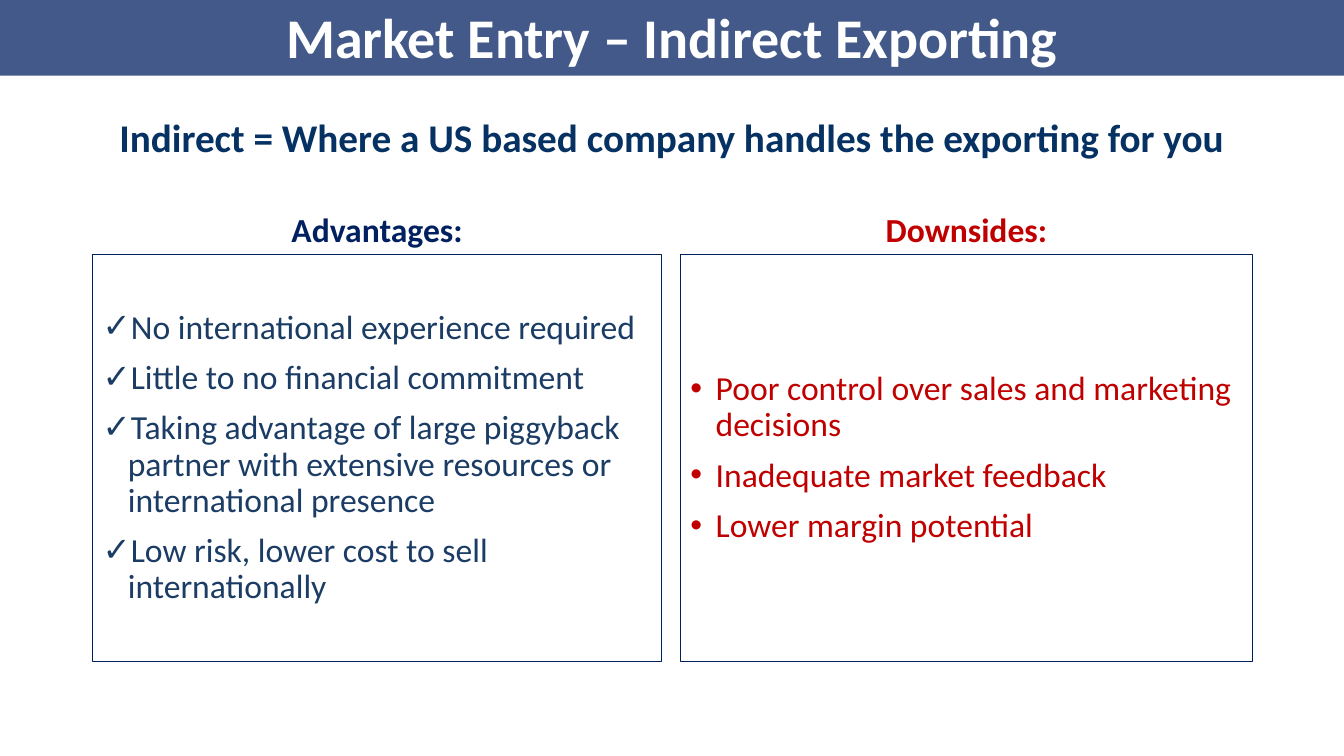
from lxml.etree import SubElement
from pptx import Presentation
from pptx.dml.color import RGBColor
from pptx.enum.shapes import MSO_SHAPE as Shape
from pptx.enum.text import MSO_ANCHOR as Anchor, PP_ALIGN as Align
from pptx.oxml.ns import qn
from pptx.util import Inches, Pt

WHITE = RGBColor(0xFF, 0xFF, 0xFF)
NAVY = RGBColor(0x00, 0x20, 0x60)
STEEL = RGBColor(0x1B, 0x3C, 0x65)
DEEP_BLUE = RGBColor(0x06, 0x31, 0x63)
RED = RGBColor(0xC0, 0x00, 0x00)

SLIDE_W, SLIDE_H = 13.33, 7.5
HEADING_H = 0.9
INDENT = Inches(0.25)

ADVANTAGES = [
    "No international experience required",
    "Little to no financial commitment",
    "Taking advantage of large piggyback partner with extensive resources or "
    "international presence",
    "Low risk, lower cost to sell internationally",
]
DOWNSIDES = [
    "Poor control over sales and marketing decisions",
    "Inadequate market feedback",
    "Lower margin potential",
]


def write(paragraph, text, size, color, bold=False):
    run = paragraph.add_run()
    run.text = text
    run.font.name = "Calibri"
    run.font.size = Pt(size)
    run.font.bold = bold
    run.font.color.rgb = color


def add_bullet(paragraph, mark):
    """Give the paragraph a bullet mark and a hanging indent."""
    props = paragraph._p.get_or_add_pPr()
    props.set("marL", str(INDENT))
    props.set("indent", str(-INDENT))
    SubElement(props, qn("a:buFont"), typeface="Arial")
    SubElement(props, qn("a:buChar"), char=mark)


def add_rectangle(slide, box):
    rectangle = slide.shapes.add_shape(Shape.RECTANGLE, *map(Inches, box))
    rectangle.shadow.inherit = False
    rectangle.text_frame.word_wrap = True
    rectangle.text_frame.vertical_anchor = Anchor.MIDDLE
    return rectangle


def add_line_of_text(slide, box, text, size, color, anchor, spacing=1.0):
    """Add a text box with one bold, centred line."""
    frame = slide.shapes.add_textbox(*map(Inches, box)).text_frame
    frame.word_wrap = True
    frame.vertical_anchor = anchor
    paragraph = frame.paragraphs[0]
    paragraph.alignment = Align.CENTER
    paragraph.line_spacing = spacing
    write(paragraph, text, size, color, bold=True)


def add_title_band(slide, box, title):
    band = add_rectangle(slide, box)
    band.fill.solid()
    band.fill.fore_color.rgb = NAVY
    color = band.fill._xPr.find(qn("a:solidFill"))[0]
    SubElement(color, qn("a:alpha"), val="74000")
    band.line.fill.background()
    frame = band.text_frame
    frame.margin_left = frame.margin_right = Inches(0.12)
    frame.margin_top = frame.margin_bottom = Inches(0.06)
    frame.paragraphs[0].alignment = Align.CENTER
    write(frame.paragraphs[0], title, 40, WHITE, bold=True)


def add_column(slide, box, heading, heading_color, points, mark, color):
    """Place a heading above an outlined panel of bulleted points."""
    left, top, width, height = box
    add_line_of_text(slide, (left, top, width, HEADING_H), heading, 24,
                     heading_color, Anchor.BOTTOM, 0.9)
    panel = add_rectangle(
        slide, (left, top + HEADING_H, width, height - HEADING_H))
    panel.fill.background()
    panel.line.color.rgb = NAVY
    panel.line.width = Pt(0.75)
    frame = panel.text_frame
    for index, point in enumerate(points):
        paragraph = frame.add_paragraph() if index else frame.paragraphs[0]
        paragraph.alignment = Align.LEFT
        paragraph.line_spacing = 0.9
        if index:
            paragraph.space_before = Pt(10)
        add_bullet(paragraph, mark)
        write(paragraph, point, 24, color)


def main():
    deck = Presentation()
    deck.slide_width, deck.slide_height = Inches(SLIDE_W), Inches(SLIDE_H)
    slide = deck.slides.add_slide(deck.slide_layouts[6])
    add_column(slide, (0.92, 1.63, 5.64, 4.93), "Advantages:", NAVY,
               ADVANTAGES, "✓", STEEL)
    add_column(slide, (6.75, 1.63, 5.67, 4.93), "Downsides:", RED,
               DOWNSIDES, "•", RED)
    add_title_band(slide, (0, -0.04, SLIDE_W, 0.79),
                   "Market Entry – Indirect Exporting")
    add_line_of_text(
        slide, (0.91, 1.08, 11.5, 0.57),
        "Indirect = Where a US based company handles the exporting for you",
        28, DEEP_BLUE, Anchor.TOP)
    deck.save("out.pptx")


if __name__ == "__main__":
    main()
